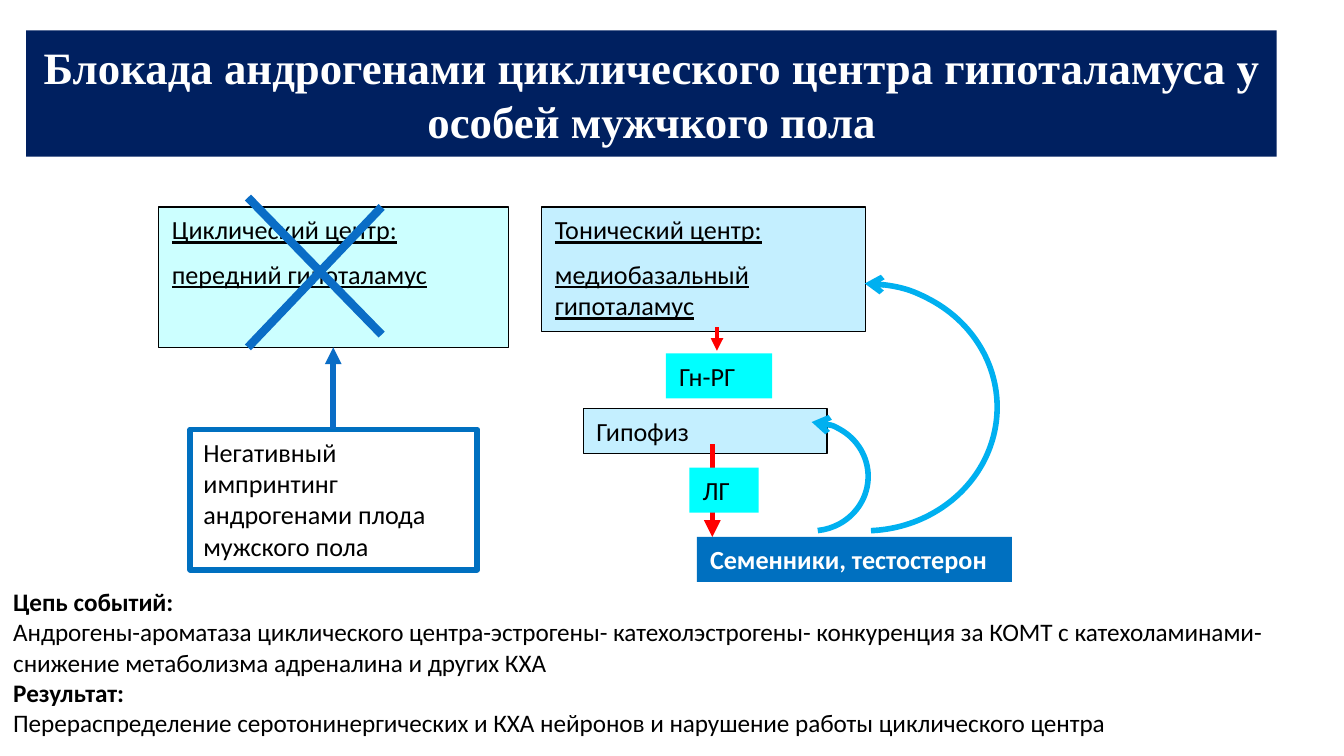
"""Build a slide on androgen blockade of the cyclic hypothalamic centre."""
from lxml import etree
from pptx import Presentation
from pptx import util as u
from pptx.dml.color import RGBColor
from pptx.enum import shapes, text
from pptx.oxml import ns

PX = 4572
NAVY = RGBColor(0x00, 0x20, 0x60)
BLUE = RGBColor(0x00, 0x70, 0xC0)
CROSS_BLUE = RGBColor(0x0A, 0x6D, 0xC6)
SKY = RGBColor(0x00, 0xB0, 0xF0)
PALE_BLUE = RGBColor(0xC4, 0xEF, 0xFF)
PALE_CYAN = RGBColor(0xCC, 0xFF, 0xFF)
CYAN = RGBColor(0x00, 0xFF, 0xFF)
RED = RGBColor(0xFF, 0x00, 0x00)
BLACK = RGBColor(0x00, 0x00, 0x00)
WHITE = RGBColor(0xFF, 0xFF, 0xFF)


def px(*lengths):
    """Turn px lengths into EMU."""
    return [u.Emu(length * PX) for length in lengths]


def add_run(paragraph, words, size, color=BLACK, bold=False, underline=False, name="Calibri"):
    """Add one formatted run."""
    run = paragraph.add_run()
    run.text = words
    font = run.font
    font.name, font.size, font.bold, font.underline = name, u.Pt(size), bold, underline
    font.color.rgb = color


def add_paragraphs(frame, lines, gap=0):
    """Yield a left-aligned paragraph with each line's words."""
    frame.word_wrap = True
    for index, words in enumerate(lines):
        paragraph = frame.paragraphs[0] if index == 0 else frame.add_paragraph()
        paragraph.alignment = text.PP_ALIGN.LEFT
        if index and gap:
            paragraph.space_before = u.Pt(gap)
        yield paragraph, words


def add_arrowhead(shape, end, kind):
    """Put an arrowhead on one end of a line or arc."""
    line = shape.line._get_or_add_ln()
    etree.SubElement(line, ns.qn(f"a:{end}"), type=kind)


def add_box(parts, box, lines, fill=None, line=None, width=0.75, **style):
    """Add a rectangle with text."""
    shape = parts.add_shape(shapes.MSO_SHAPE.RECTANGLE, *px(*box))
    shape.shadow.inherit = False
    if fill is None:
        shape.fill.background()
    else:
        shape.fill.solid()
        shape.fill.fore_color.rgb = fill
    if line is None:
        shape.line.fill.background()
    else:
        shape.line.color.rgb = line
        shape.line.width = u.Pt(width)
    shape.text_frame.vertical_anchor = text.MSO_ANCHOR.TOP
    for paragraph, words in add_paragraphs(shape.text_frame, lines, gap=7):
        add_run(paragraph, words, 14, **style)


def add_line(parts, start, end, color, width, arrow=False):
    """Add a straight line, with an arrowhead at its end if asked."""
    line = parts.add_connector(shapes.MSO_CONNECTOR.STRAIGHT, *px(*start, *end))
    line.line.color.rgb = color
    line.line.width = u.Pt(width)
    if arrow:
        add_arrowhead(line, "tailEnd", "triangle")
    etree.SubElement(line._element.spPr, ns.qn("a:effectLst"))


def add_feedback_arc(parts, box, end_angle):
    """Add an arc that points back from its top end."""
    arc = parts.add_shape(shapes.MSO_SHAPE.ARC, *px(*box))
    arc.shadow.inherit = False
    arc.adjustments[0] = 162
    arc.adjustments[1] = end_angle
    arc.fill.background()
    arc.line.color.rgb = SKY
    arc.line.width = u.Pt(3)
    add_arrowhead(arc, "headEnd", "arrow")


def add_title(slide, box):
    """Place the title band."""
    title = slide.shapes.title
    title.left, title.top, title.width, title.height = px(*box)
    title.fill.solid()
    title.fill.fore_color.rgb = NAVY
    frame = title.text_frame
    frame.word_wrap = True
    frame.auto_size = text.MSO_AUTO_SIZE.NONE
    frame.vertical_anchor = text.MSO_ANCHOR.MIDDLE
    paragraph = frame.paragraphs[0]
    paragraph.alignment = text.PP_ALIGN.CENTER
    add_run(paragraph, "Блокада андрогенами циклического центра гипоталамуса у особей мужчкого пола",
            24, WHITE, bold=True, name="Times New Roman")


def add_cyclic_branch(parts, box):
    """Draw the crossed-out cyclic centre and what blocks it."""
    x, y, width, height = box
    row = 209
    add_box(parts, (x, y, width, row), ["Циклический центр:", "передний гипоталамус"],
            PALE_CYAN, BLACK, underline=True)
    add_line(parts, (x + 332, y), (x + 133, y + row), CROSS_BLUE, 4.5)
    add_line(parts, (x + 332, y + 190), (x + 133, y - 14), CROSS_BLUE, 4.5)
    add_box(parts, (x + 47, y + height - row, 427, row),
            ["Негативный импринтинг андрогенами плода мужского пола"], line=BLUE, width=3)
    middle = x + width // 2
    add_line(parts, (middle, y + height - row), (middle, y + row), CROSS_BLUE, 3, arrow=True)


def add_tonic_branch(parts, box):
    """Draw the tonic centre chain with its feedback arcs."""
    x, y, width, height = box
    row = 67
    add_box(parts, (x, y, 482, 185), ["Тонический центр:", "медиобазальный гипоталамус"],
            PALE_BLUE, BLACK, underline=True)
    add_line(parts, (x + 261, y + 179), (x + 261, y + 214), RED, 2.25, arrow=True)
    add_box(parts, (x + 62, y + 300, 363, row), ["Гипофиз"], PALE_BLUE, BLACK)
    add_line(parts, (x + 254, y + 353), (x + 254, y + height - row), RED, 3, arrow=True)
    add_box(parts, (x + 185, y + 218, 158, row), ["Гн-РГ"], CYAN)
    add_box(parts, (x + 220, y + 388, 103, row), ["ЛГ"], CYAN)
    add_box(parts, (x + 231, y + height - row, width - 231, row),
            ["Семенники, тестостерон"], BLUE, color=WHITE, bold=True)
    add_feedback_arc(parts, (x + 284, y + 114, 394, 368), 52.28)
    add_feedback_arc(parts, (x + 318, y + 320, 168, 162), 50.15)


def add_summary(slide, box):
    """Write the chain of events and the result."""
    frame = slide.shapes.add_textbox(*px(*box)).text_frame
    lines = [
        "Цепь событий:",
        "Андрогены-ароматаза циклического центра-эстрогены- катехолэстрогены- конкуренция "
        "за КОМТ с катехоламинами-снижение метаболизма адреналина и других КХА",
        "Результат:",
        "Перераспределение серотонинергических и КХА нейронов и нарушение работы циклического центра",
    ]
    for paragraph, words in add_paragraphs(frame, lines):
        add_run(paragraph, words, 13.5, bold=words.endswith(":"))


def main():
    """Build and save the slide."""
    presentation = Presentation()
    presentation.slide_width, presentation.slide_height = px(2000, 1125)
    slide = presentation.slides.add_slide(presentation.slide_layouts[5])
    add_title(slide, (39, 45, 1861, 188))
    diagram = slide.shapes.add_group_shape().shapes
    add_cyclic_branch(diagram, (236, 308, 521, 540))
    add_tonic_branch(diagram, (806, 308, 700, 558))
    add_summary(slide, (0, 863, 2000, 292))
    presentation.save("out.pptx")


if __name__ == "__main__":
    main()
